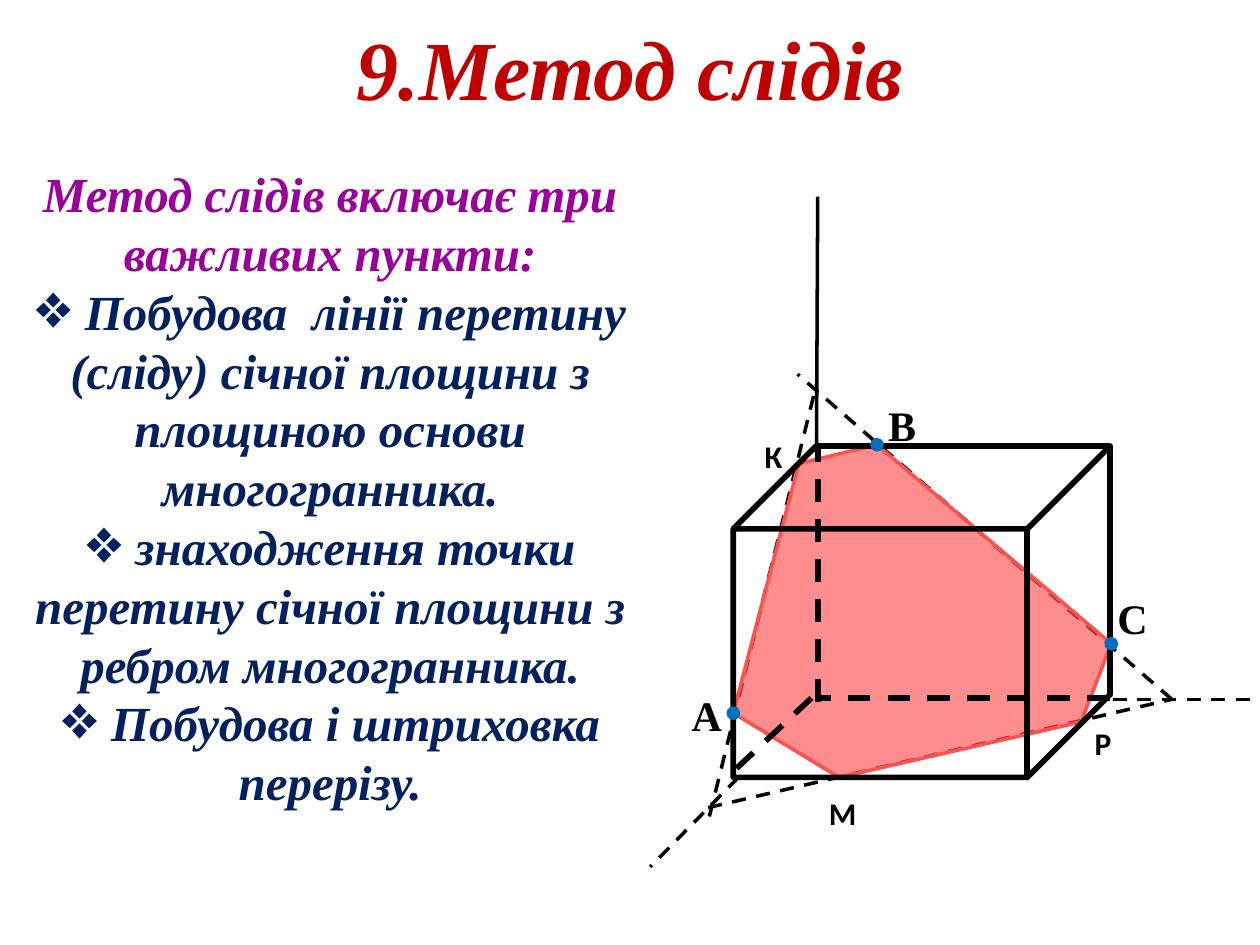
from dataclasses import dataclass

from lxml import etree
from pptx import Presentation
from pptx import util as u
from pptx.dml.color import RGBColor
from pptx.enum import dml, shapes, text
from pptx.oxml import ns

Point = tuple[float, float]


@dataclass(frozen=True)
class Theme:
    serif: str = "Times New Roman"
    sans: str = "Calibri"
    title: str = "C00000"
    lead: str = "990099"
    item: str = "002060"
    ink: str = "000000"
    section: str = "FF5050"
    dot: str = "0070C0"
    title_size: float = 48
    body_size: float = 28
    body_leading: float = 33.6
    given_size: float = 24
    found_size: float = 18
    thin: float = 2
    thick: float = 3.25
    section_opacity: int = 65


@dataclass(frozen=True)
class Segment:
    start: Point
    end: Point
    weight: float
    dashed: bool = True


@dataclass(frozen=True)
class Label:
    letter: str
    corner: Point
    size: Point
    font: str
    points: float


THEME = Theme()
A, M, P, C, B, K = SECTION = [
    (5.82, 5.66), (6.66, 6.17), (8.58, 5.73), (8.82, 5.11), (6.96, 3.53), (6.34, 3.68),
]
TRACE_END = (9.3, 5.55)
TRACES = [
    Segment((5.63, 6.48), (6.48, 3.05), THEME.thin),
    Segment((5.62, 6.41), TRACE_END, THEME.thin),
    Segment(TRACE_END, (6.33, 2.97), THEME.thin),
]
EDGES = [
    Segment((6.48, 3.59), (6.49, 1.56), THEME.thin, dashed=False),
    Segment((6.44, 5.54), (5.78, 6.16), THEME.thick),
    Segment((8.81, 5.54), (6.51, 5.54), THEME.thick),
    Segment((6.49, 5.57), (6.49, 3.52), THEME.thick),
    Segment((5.86, 6.17), (5.16, 6.88), THEME.thin),
    Segment((8.83, 5.55), (10, 5.55), THEME.thin),
]
LABELS = [
    Label("C", (8.77, 4.65), (0.45, 0.5), THEME.serif, THEME.given_size),
    Label("B", (6.95, 3.12), (0.43, 0.5), THEME.serif, THEME.given_size),
    Label("А", (5.39, 5.42), (0.45, 0.5), THEME.serif, THEME.given_size),
    Label("М", (6.48, 6.25), (0.41, 0.4), THEME.sans, THEME.found_size),
    Label("К", (5.97, 3.42), (0.36, 0.4), THEME.sans, THEME.found_size),
    Label("Р", (8.59, 5.7), (0.37, 0.4), THEME.sans, THEME.found_size),
]
LEAD = "Метод слідів включає три важливих пункти:"
STEPS = [
    " Побудова  лінії перетину (сліду) січної площини з площиною основи многогранника.",
    " знаходження точки перетину січної площини з ребром многогранника.",
    " Побудова і штриховка перерізу.",
]


def inches(*values: float) -> list[u.Length]:
    return [u.Inches(value) for value in values]


def set_line(shape, color: str, weight: float) -> None:
    shape.line.color.rgb = RGBColor.from_string(color)
    shape.line.width = u.Pt(weight)


def set_fill(shape, color: str) -> None:
    shape.fill.solid()
    shape.fill.fore_color.rgb = RGBColor.from_string(color)


def set_font(para, name: str, size: float, color: str, italic: bool = False) -> None:
    font = para.font
    font.name, font.size = name, u.Pt(size)
    font.bold, font.italic = True, italic
    font.color.rgb = RGBColor.from_string(color)


def place(shape, left: float, top: float, width: float, height: float) -> None:
    shape.left, shape.top, shape.width, shape.height = inches(left, top, width, height)


def set_bullet(para, mark: str | None) -> None:
    """Drop the template's hanging indent and show the mark, or no bullet."""
    props = para._p.get_or_add_pPr()
    props.set("marL", "0")
    props.set("indent", "0")
    if mark:
        etree.SubElement(props, ns.qn("a:buFont"), typeface=THEME.serif)
        etree.SubElement(props, ns.qn("a:buChar"), char=mark)
    else:
        etree.SubElement(props, ns.qn("a:buNone"))


def write_title(slide) -> None:
    title = slide.shapes.title
    place(title, 0.47, 0.08, 9.06, 0.91)
    title.text_frame.text = "9.Метод слідів"
    para = title.text_frame.paragraphs[0]
    para.alignment = text.PP_ALIGN.CENTER
    set_font(para, THEME.serif, THEME.title_size, THEME.title, italic=True)


def write_body(slide) -> None:
    body = slide.placeholders[1]
    place(body, 0.16, 1.25, 4.92, 5.28)
    frame = body.text_frame
    frame.text = "\n".join([LEAD, *STEPS])
    for index, para in enumerate(frame.paragraphs):
        para.alignment = text.PP_ALIGN.CENTER
        para.space_before = u.Pt(0)
        para.line_spacing = u.Pt(THEME.body_leading)
        set_bullet(para, "❖" if index else None)
        color = THEME.item if index else THEME.lead
        set_font(para, THEME.serif, THEME.body_size, color, italic=True)


def draw_segment(slide, segment: Segment) -> None:
    line = slide.shapes.add_connector(
        shapes.MSO_CONNECTOR.STRAIGHT, *inches(*segment.start, *segment.end))
    set_line(line, THEME.ink, segment.weight)
    if segment.dashed:
        line.line.dash_style = dml.MSO_LINE.DASH
    etree.SubElement(line._element.spPr, ns.qn("a:effectLst"))


def draw_section(slide) -> None:
    start, *rest = [inches(*point) for point in SECTION]
    builder = slide.shapes.build_freeform(*start)
    builder.add_line_segments(rest, close=True)
    polygon = builder.convert_to_shape()
    polygon.shadow.inherit = False
    set_fill(polygon, THEME.section)
    set_line(polygon, THEME.section, THEME.thin)
    color = polygon._element.spPr.find(ns.qn("a:solidFill"))[0]
    etree.SubElement(color, ns.qn("a:alpha"), val=str(THEME.section_opacity * 1000))


def draw_cube(slide) -> None:
    cube = slide.shapes.add_shape(shapes.MSO_SHAPE.CUBE, *inches(5.82, 3.54, 2.99, 2.63))
    cube.shadow.inherit = False
    cube.fill.background()
    set_line(cube, THEME.ink, THEME.thick)


def draw_dot(slide, center: Point, size: float = 0.08) -> None:
    left, top = (value - size / 2 for value in center)
    dot = slide.shapes.add_shape(shapes.MSO_SHAPE.OVAL, *inches(left, top, size, size))
    dot.shadow.inherit = False
    set_fill(dot, THEME.dot)
    set_line(dot, THEME.dot, THEME.thin)


def draw_label(slide, label: Label) -> None:
    box = slide.shapes.add_textbox(*inches(*label.corner, *label.size))
    box.text_frame.word_wrap = False
    box.text_frame.text = label.letter
    set_font(box.text_frame.paragraphs[0], label.font, label.points, THEME.ink)


def main() -> None:
    deck = Presentation()
    deck.slide_width, deck.slide_height = inches(10, 7.5)
    slide = deck.slides.add_slide(deck.slide_layouts[1])
    write_title(slide)
    write_body(slide)
    for trace in TRACES:
        draw_segment(slide, trace)
    draw_section(slide)
    for edge in EDGES:
        draw_segment(slide, edge)
    draw_cube(slide)
    for point in (A, B, C):
        draw_dot(slide, point)
    for label in LABELS:
        draw_label(slide, label)
    deck.save("out.pptx")


if __name__ == "__main__":
    main()
